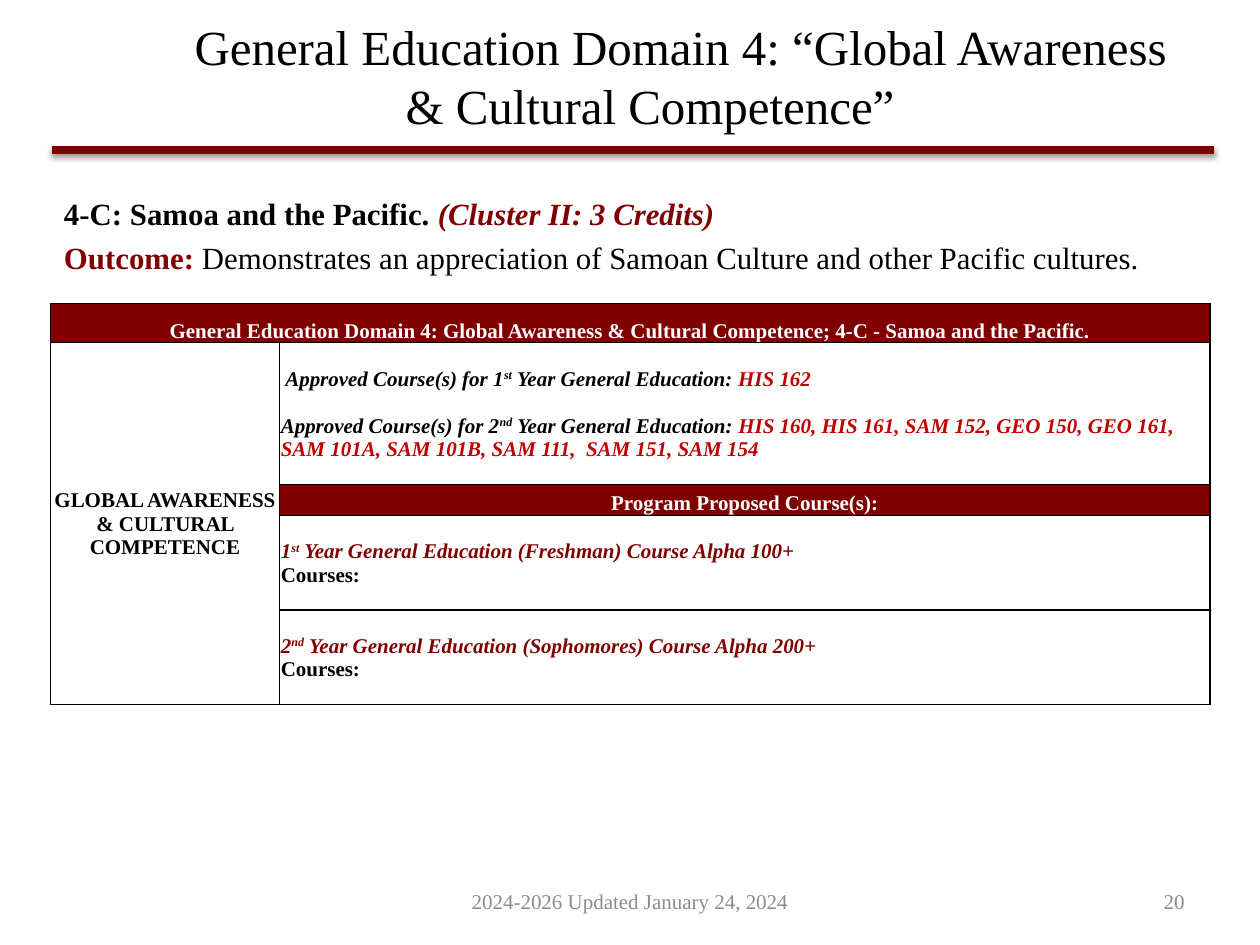
import pptx
import pptx.dml.color
import pptx.enum.shapes
import pptx.enum.text
import pptx.oxml
import pptx.oxml.ns
import pptx.util

Pt = pptx.util.Pt
RGBColor = pptx.dml.color.RGBColor
ALIGN = pptx.enum.text.PP_ALIGN
ANCHOR = pptx.enum.text.MSO_ANCHOR

BLACK = RGBColor(0x00, 0x00, 0x00)
WHITE = RGBColor(0xFF, 0xFF, 0xFF)
MAROON = RGBColor(0x80, 0x00, 0x00)
RED = RGBColor(0xC0, 0x00, 0x00)
GRAY = RGBColor(0x8C, 0x8C, 0x8C)


class SlideBuilder:
    font_name = "Times New Roman"

    def __init__(self, presentation):
        self.slide = presentation.slides.add_slide(presentation.slide_layouts[5])

    def fill_text(self, text_frame, paragraphs, size, align=ALIGN.LEFT, gap=0):
        """Each paragraph is a list of (text, colour, style); style holds b, i or ^."""
        for index, parts in enumerate(paragraphs):
            paragraph = text_frame.add_paragraph() if index else text_frame.paragraphs[0]
            paragraph.alignment = align
            paragraph.space_before = Pt(gap if index else 0)
            for text, color, style in parts:
                run = paragraph.add_run()
                run.text = text
                run.font.name = self.font_name
                run.font.size = Pt(size)
                run.font.color.rgb = color
                run.font.bold = "b" in style
                run.font.italic = "i" in style
                if "^" in style:
                    run._r.get_or_add_rPr().set("baseline", "30000")

    def title(self, text, left, top, width, height, size, indent):
        shape = self.slide.shapes.title
        shape.left, shape.top = Pt(left), Pt(top)
        shape.width, shape.height = Pt(width), Pt(height)
        text_frame = shape.text_frame
        text_frame.auto_size = pptx.enum.text.MSO_AUTO_SIZE.NONE
        text_frame.vertical_anchor = ANCHOR.MIDDLE
        self.fill_text(text_frame, [[(text, BLACK, "")]], size, ALIGN.CENTER)
        properties = text_frame.paragraphs[0]._p.get_or_add_pPr()
        properties.set("indent", str(Pt(indent)))

    def text(self, paragraphs, left, top, width, height, size,
             align=ALIGN.LEFT, anchor=ANCHOR.TOP, gap=0):
        shape = self.slide.shapes.add_textbox(Pt(left), Pt(top), Pt(width), Pt(height))
        shape.text_frame.word_wrap = True
        shape.text_frame.vertical_anchor = anchor
        self.fill_text(shape.text_frame, paragraphs, size, align, gap)

    def rule(self, left, right, top, width, color):
        line = self.slide.shapes.add_connector(
            pptx.enum.shapes.MSO_CONNECTOR.STRAIGHT, Pt(left), Pt(top), Pt(right), Pt(top))
        line.line.color.rgb = color
        line.line.width = Pt(width)
        line._element.spPr.append(pptx.oxml.parse_xml(
            f'<a:effectLst {pptx.oxml.ns.nsdecls("a")}>'
            f'<a:outerShdw blurRad="{Pt(3.1)}" dist="{Pt(1.6)}" dir="5400000" rotWithShape="0">'
            '<a:srgbClr val="000000"><a:alpha val="38000"/></a:srgbClr>'
            '</a:outerShdw></a:effectLst>'))

    def table(self, left, top, columns, rows):
        frame = self.slide.shapes.add_table(
            len(rows), len(columns), Pt(left), Pt(top), Pt(sum(columns)), Pt(sum(rows)))
        table = frame.table
        table.first_row = table.horz_banding = False
        for column, width in zip(table.columns, columns):
            column.width = Pt(width)
        for row, height in zip(table.rows, rows):
            row.height = Pt(height)
        for cell in table.iter_cells():
            cell.margin_left = cell.margin_right = cell.margin_top = Pt(0.7)
            cell.margin_bottom = 0
            cell.fill.background()
            self.border(cell)
        return table

    def border(self, cell):
        for index, edge in enumerate("LRTB"):
            cell._tc.get_or_add_tcPr().insert(index, pptx.oxml.parse_xml(
                f'<a:ln{edge} {pptx.oxml.ns.nsdecls("a")} w="{Pt(1)}">'
                f'<a:solidFill><a:srgbClr val="{BLACK}"/></a:solidFill></a:ln{edge}>'))

    def cell(self, cell, paragraphs, align=ALIGN.LEFT, anchor=ANCHOR.MIDDLE, gap=0):
        cell.vertical_anchor = anchor
        self.fill_text(cell.text_frame, paragraphs, 12, align, gap)

    def banner(self, cell, text):
        cell.fill.solid()
        cell.fill.fore_color.rgb = MAROON
        self.cell(cell, [[(text, WHITE, "b")]], ALIGN.CENTER, ANCHOR.BOTTOM)


def year_label(before, suffix, after, color):
    return [(before, color, "bi"), (suffix, color, "bi^"), (after, color, "bi")]


def main():
    presentation = pptx.Presentation()
    presentation.slide_width, presentation.slide_height = Pt(720), Pt(540)
    builder = SlideBuilder(presentation)

    # Heading
    builder.title("General Education Domain 4: “Global Awareness & Cultural Competence”",
                  59, 8.6, 625, 69, 28, 35)
    builder.rule(29.5, 694, 85.7, 4.5, MAROON)

    # Outcome statement
    builder.text([
        [("4-C: Samoa and the Pacific. ", BLACK, "b"),
         ("(Cluster II: 3 Credits)", MAROON, "bi")],
        [("Outcome: ", MAROON, "b"),
         ("Demonstrates an appreciation of Samoan Culture and other Pacific cultures.",
          BLACK, "")],
    ], 29.5, 108, 662.4, 61, 17.6, gap=4)

    # Course table
    table = builder.table(28.8, 173.5, [131, 531.7], [22.3, 81.2, 17.6, 54, 54])
    table.cell(0, 0).merge(table.cell(0, 1))
    table.cell(1, 0).merge(table.cell(4, 0))
    builder.banner(table.cell(0, 0), "General Education Domain 4: Global Awareness & "
                   "Cultural Competence; 4-C - Samoa and the Pacific.")
    builder.cell(table.cell(1, 0), [[("GLOBAL AWARENESS & CULTURAL COMPETENCE", BLACK, "b")]],
                 ALIGN.CENTER)
    approved_after = " Year General Education: "
    builder.cell(table.cell(1, 1), [
        year_label(" Approved Course(s) for 1", "st", approved_after, BLACK)
        + [("HIS 162", RED, "bi")],
        year_label("Approved Course(s) for 2", "nd", approved_after, BLACK)
        + [("HIS 160, HIS 161, SAM 152, GEO 150, GEO 161, SAM 101A, SAM 101B, "
            "SAM 111,  SAM 151, SAM 154", RED, "bi")],
    ], gap=13.5)
    builder.banner(table.cell(2, 1), "Program Proposed Course(s):")
    proposed = [("1", "st", "Freshman", 100), ("2", "nd", "Sophomores", 200)]
    for row, (year, suffix, students, level) in enumerate(proposed, start=3):
        after = f" Year General Education ({students}) Course Alpha {level}+"
        builder.cell(table.cell(row, 1), [
            year_label(year, suffix, after, MAROON), [("Courses:", BLACK, "b")]])

    # Footer
    builder.text([[("2024-2026 Updated January 24, 2024", GRAY, "")]],
                 246, 500.4, 228, 28.8, 12, ALIGN.CENTER, ANCHOR.MIDDLE)
    builder.text([[("20", GRAY, "")]],
                 516, 500.4, 168, 28.8, 12, ALIGN.RIGHT, ANCHOR.MIDDLE)

    presentation.save("out.pptx")


if __name__ == "__main__":
    main()
